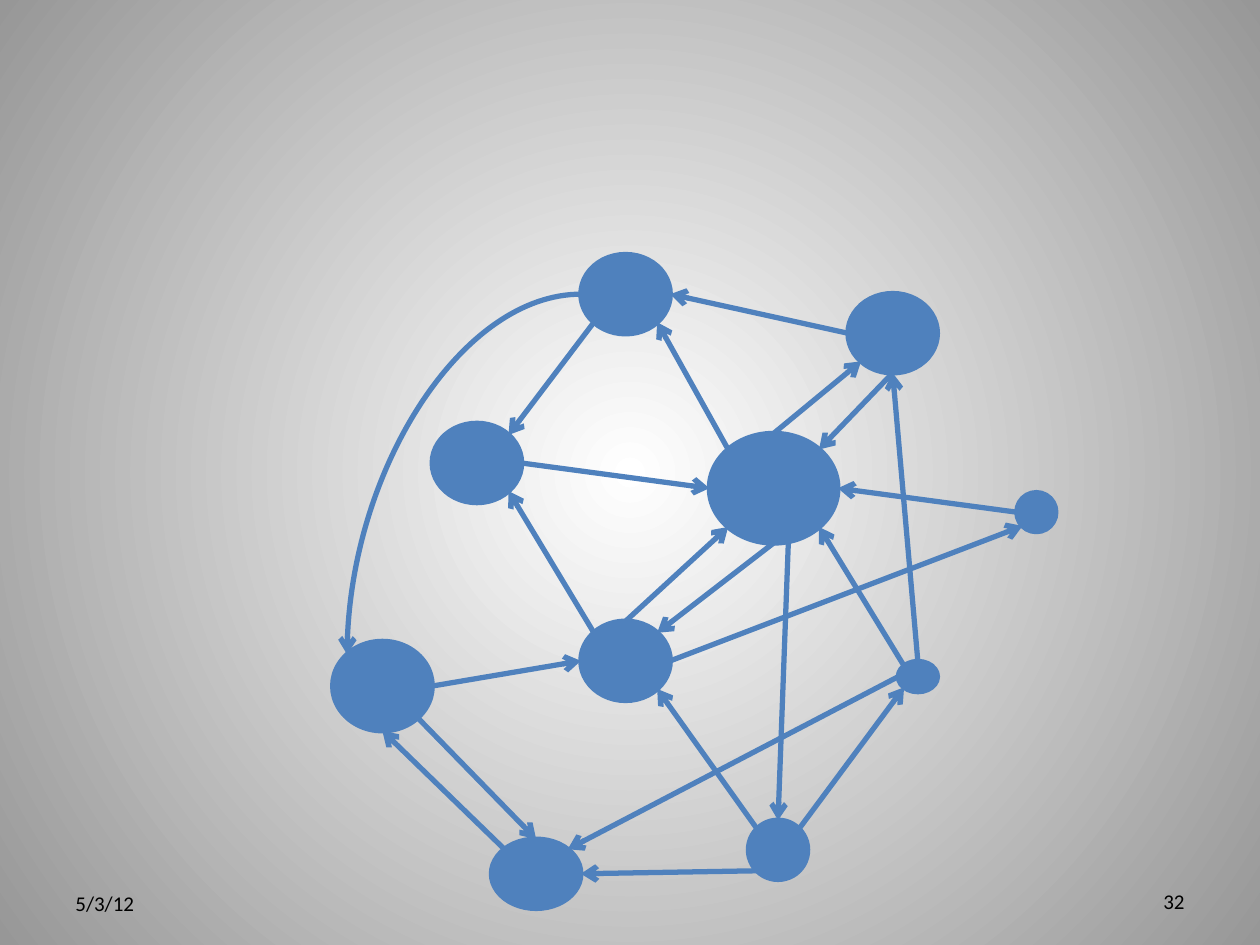
from math import cos, pi, sin

from lxml.etree import SubElement
from pptx import Presentation
from pptx.dml.color import RGBColor
from pptx.enum.shapes import MSO_CONNECTOR, MSO_SHAPE
from pptx.enum.text import MSO_ANCHOR, PP_ALIGN
from pptx.oxml.ns import qn
from pptx.util import Inches, Pt

BLUE = RGBColor(0x4F, 0x81, 0xBD)
BLACK = RGBColor(0, 0, 0)
WHITE = RGBColor(0xFF, 0xFF, 0xFF)
GREY = RGBColor(0x97, 0x97, 0x97)

TOP, TOP_LEFT, LEFT, BOTTOM_LEFT, BOTTOM, BOTTOM_RIGHT, RIGHT, TOP_RIGHT = range(8)

NODES = {
    "hub": (5.63, 3.44, 1.02, 0.87),
    "upper_right": (6.73, 2.33, 0.71, 0.63),
    "center": (4.61, 4.93, 0.71, 0.63),
    "small_right": (7.13, 5.25, 0.31, 0.24),
    "far_right": (8.07, 3.91, 0.31, 0.31),
    "lower_right": (5.94, 6.51, 0.47, 0.47),
    "summit": (4.61, 2.02, 0.71, 0.63),
    "upper_left": (3.43, 3.36, 0.71, 0.63),
    "far_left": (2.64, 5.09, 0.79, 0.71),
    "lower_left": (3.9, 6.66, 0.71, 0.55),
}

EDGES = [
    ("far_right", LEFT, "hub", RIGHT),
    ("center", RIGHT, "far_right", BOTTOM_LEFT),
    ("upper_right", LEFT, "summit", RIGHT),
    ("summit", BOTTOM_LEFT, "upper_left", TOP_RIGHT),
    ("upper_left", RIGHT, "hub", LEFT),
    ("hub", TOP_LEFT, "summit", BOTTOM_RIGHT),
    ("hub", TOP, "upper_right", BOTTOM_LEFT),
    ("upper_right", BOTTOM, "hub", TOP_RIGHT),
    ("small_right", TOP, "upper_right", BOTTOM),
    ("small_right", TOP_LEFT, "hub", BOTTOM_RIGHT),
    ("small_right", LEFT, "lower_left", TOP_RIGHT),
    ("lower_right", TOP_RIGHT, "small_right", BOTTOM_LEFT),
    ("lower_right", BOTTOM_LEFT, "lower_left", RIGHT),
    ("lower_left", TOP_LEFT, "far_left", BOTTOM),
    ("far_left", RIGHT, "center", LEFT),
    ("center", TOP_LEFT, "upper_left", BOTTOM_RIGHT),
    ("center", TOP, "hub", BOTTOM_LEFT),
    ("far_left", BOTTOM_RIGHT, "lower_left", TOP),
    ("hub", BOTTOM, "center", TOP_RIGHT),
    ("lower_right", TOP_LEFT, "center", BOTTOM_RIGHT),
]


def site_point(node, site):
    angle = site * pi / 4
    return (
        node.left + node.width * (1 - sin(angle)) / 2,
        node.top + node.height * (1 - cos(angle)) / 2,
    )


class GraphSlide:
    def __init__(self, page):
        self.page = page
        self.font = "Calibri"
        self.text_size = Pt(12)
        self.line_width = Pt(3)

    def radial_background(self, inner, outer):
        fill = self.page.background.fill
        fill.gradient()
        for stop, color, position in zip(fill.gradient_stops, (inner, outer), (0, 1)):
            stop.color.rgb = color
            stop.position = position
        gradient = self.page.element.find(".//" + qn("a:gradFill"))
        gradient.remove(gradient.find(qn("a:lin")))
        circle = SubElement(gradient, qn("a:path"), path="circle")
        SubElement(circle, qn("a:fillToRect"), l="50000", t="50000", r="50000", b="50000")

    def text(self, words, left, top, width, height, align=PP_ALIGN.LEFT):
        box = self.page.shapes.add_textbox(*map(Inches, (left, top, width, height)))
        frame = box.text_frame
        frame.word_wrap = True
        frame.vertical_anchor = MSO_ANCHOR.MIDDLE
        para = frame.paragraphs[0]
        para.text = words
        para.alignment = align
        para.font.name = self.font
        para.font.size = self.text_size
        para.font.color.rgb = BLACK

    def node(self, *bounds):
        ellipse = self.page.shapes.add_shape(MSO_SHAPE.OVAL, *map(Inches, bounds))
        ellipse.shadow.inherit = False
        ellipse.fill.solid()
        ellipse.fill.fore_color.rgb = BLUE
        ellipse.line.color.rgb = BLUE
        ellipse.line.width = self.line_width
        return ellipse

    def arrow(self, start, end, kind=MSO_CONNECTOR.STRAIGHT):
        connector = self.page.shapes.add_connector(kind, *map(int, (*start, *end)))
        connector.line.color.rgb = BLUE
        connector.line.width = self.line_width
        SubElement(connector.line._get_or_add_ln(), qn("a:tailEnd"), type="arrow")
        SubElement(connector.element.spPr, qn("a:effectLst"))
        return connector

    def edge(self, source, source_site, target, target_site, kind=MSO_CONNECTOR.STRAIGHT):
        start = site_point(source, source_site)
        end = site_point(target, target_site)
        connector = self.arrow(start, end, kind)
        joints = connector.element.find(".//" + qn("p:cNvCxnSpPr"))
        SubElement(joints, qn("a:stCxn"), id=str(source.shape_id), idx=str(source_site))
        SubElement(joints, qn("a:endCxn"), id=str(target.shape_id), idx=str(target_site))
        return connector

    def quarter_curve(self, *ends):
        connector = self.edge(*ends, kind=MSO_CONNECTOR.CURVE)
        connector.element.find(".//" + qn("a:prstGeom")).set("prst", "curvedConnector2")


def main():
    deck = Presentation()
    deck.slide_width = Inches(10)
    deck.slide_height = Inches(7.5)
    slide = GraphSlide(deck.slides.add_slide(deck.slide_layouts[6]))
    slide.radial_background(WHITE, GREY)
    slide.text("5/3/12", 0.5, 6.98, 2.22, 0.37)
    slide.text("32", 7.17, 6.95, 2.33, 0.4, PP_ALIGN.RIGHT)

    nodes = {name: slide.node(*bounds) for name, bounds in NODES.items()}
    for source, source_site, target, target_site in EDGES:
        slide.edge(nodes[source], source_site, nodes[target], target_site)
    slide.quarter_curve(nodes["summit"], LEFT, nodes["far_left"], TOP_LEFT)
    slide.arrow((Inches(6.26), Inches(4.22)), site_point(nodes["lower_right"], TOP))
    deck.save("out.pptx")


if __name__ == "__main__":
    main()
